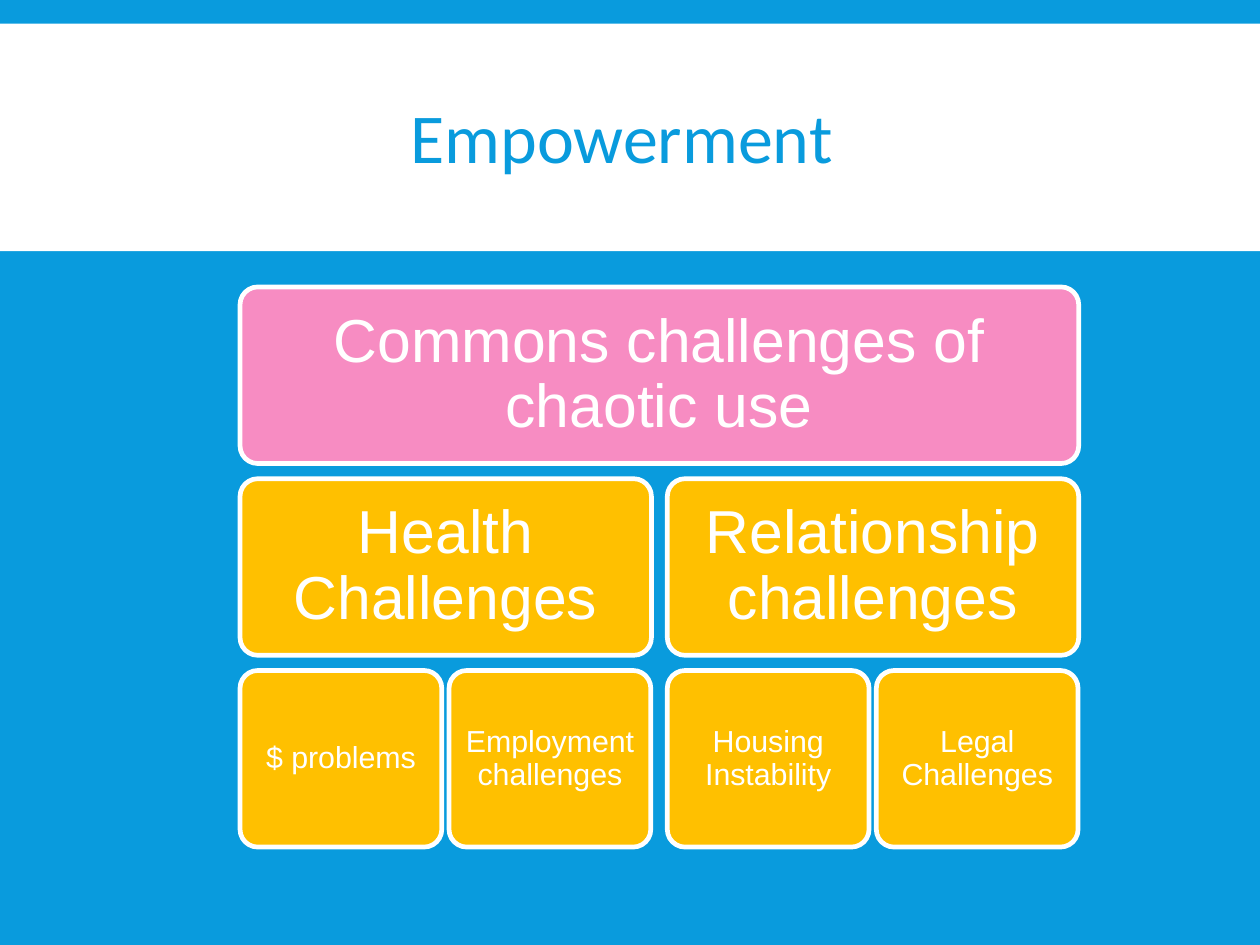
from pptx import Presentation
from pptx.dml.color import RGBColor
from pptx.enum.shapes import MSO_SHAPE
from pptx.enum.text import MSO_ANCHOR, PP_ALIGN
from pptx.util import Cm, Pt

RECTANGLE = MSO_SHAPE.RECTANGLE
ROUNDED = MSO_SHAPE.ROUNDED_RECTANGLE
MIDDLE = MSO_ANCHOR.MIDDLE
CENTER = PP_ALIGN.CENTER

BLUE, WHITE, PINK, AMBER = "099BDD", "FFFFFF", "F78CC2", "FFC000"
LEFT, TOP = 3.63, 4.34
CARD_HEIGHT, ROW_PITCH = 2.67, 2.9
HALF_WIDTH, HALF_PITCH = 6.22, 6.46
QUARTER_WIDTH, QUARTER_PITCH = 3.05, 3.16

BRANCHES = [
    ("Health Challenges", ["$ problems", "Employment challenges"]),
    ("Relationship challenges", ["Housing Instability", "Legal Challenges"]),
]


def paint(fill, color):
    """Make a fill solid in a hex colour."""
    fill.solid()
    fill.fore_color.rgb = RGBColor.from_string(color)


def write(shape, text, size, font="Arial", color=WHITE, inset=0.28, spacing=0.9):
    """Write centred, wrapped text into a shape."""
    frame = shape.text_frame
    frame.word_wrap = True
    frame.vertical_anchor = MIDDLE
    frame.margin_left = frame.margin_right = Cm(inset)
    frame.margin_top = frame.margin_bottom = Cm(inset)
    paragraph = frame.paragraphs[0]
    paragraph.alignment = CENTER
    paragraph.line_spacing = spacing
    run = paragraph.add_run()
    run.text = text
    run.font.name = font
    run.font.size = Pt(size)
    run.font.color.rgb = RGBColor.from_string(color)


def add_title(slide, text):
    """Add the white band and the title on it."""
    band = slide.shapes.add_shape(RECTANGLE, 0, Cm(0.36), Cm(19.05), Cm(3.44))
    band.shadow.inherit = False
    paint(band.fill, WHITE)
    band.line.fill.background()
    title = slide.shapes.add_textbox(Cm(1.42), Cm(0.58), Cm(16.2), Cm(3.15))
    write(title, text, 30, font="Calibri", color=BLUE, inset=0.25, spacing=0.85)


def add_card(slide, text, left, row, width, color=AMBER, size=26, inset=0.28):
    """Add a rounded card on one row of the hierarchy."""
    card = slide.shapes.add_shape(
        ROUNDED, Cm(left), Cm(TOP + row * ROW_PITCH), Cm(width), Cm(CARD_HEIGHT)
    )
    card.adjustments[0] = 0.1
    card.shadow.inherit = False
    paint(card.fill, color)
    paint(card.line.fill, WHITE)
    card.line.width = Pt(2)
    write(card, text, size, inset=inset)


def main():
    """Build and save the slide."""
    deck = Presentation()
    deck.slide_width, deck.slide_height = Cm(19.05), Cm(14.29)
    slide = deck.slides.add_slide(deck.slide_layouts[6])
    paint(slide.background.fill, BLUE)
    add_title(slide, "Empowerment ")
    add_card(slide, "Commons challenges of chaotic use", LEFT, 0,
             HALF_PITCH + HALF_WIDTH, color=PINK)
    for column, (branch, problems) in enumerate(BRANCHES):
        branch_left = LEFT + column * HALF_PITCH
        add_card(slide, branch, branch_left, 1, HALF_WIDTH)
        for position, problem in enumerate(problems):
            add_card(slide, problem, branch_left + position * QUARTER_PITCH, 2,
                     QUARTER_WIDTH, size=13, inset=0.13)
    deck.save("out.pptx")


if __name__ == "__main__":
    main()
